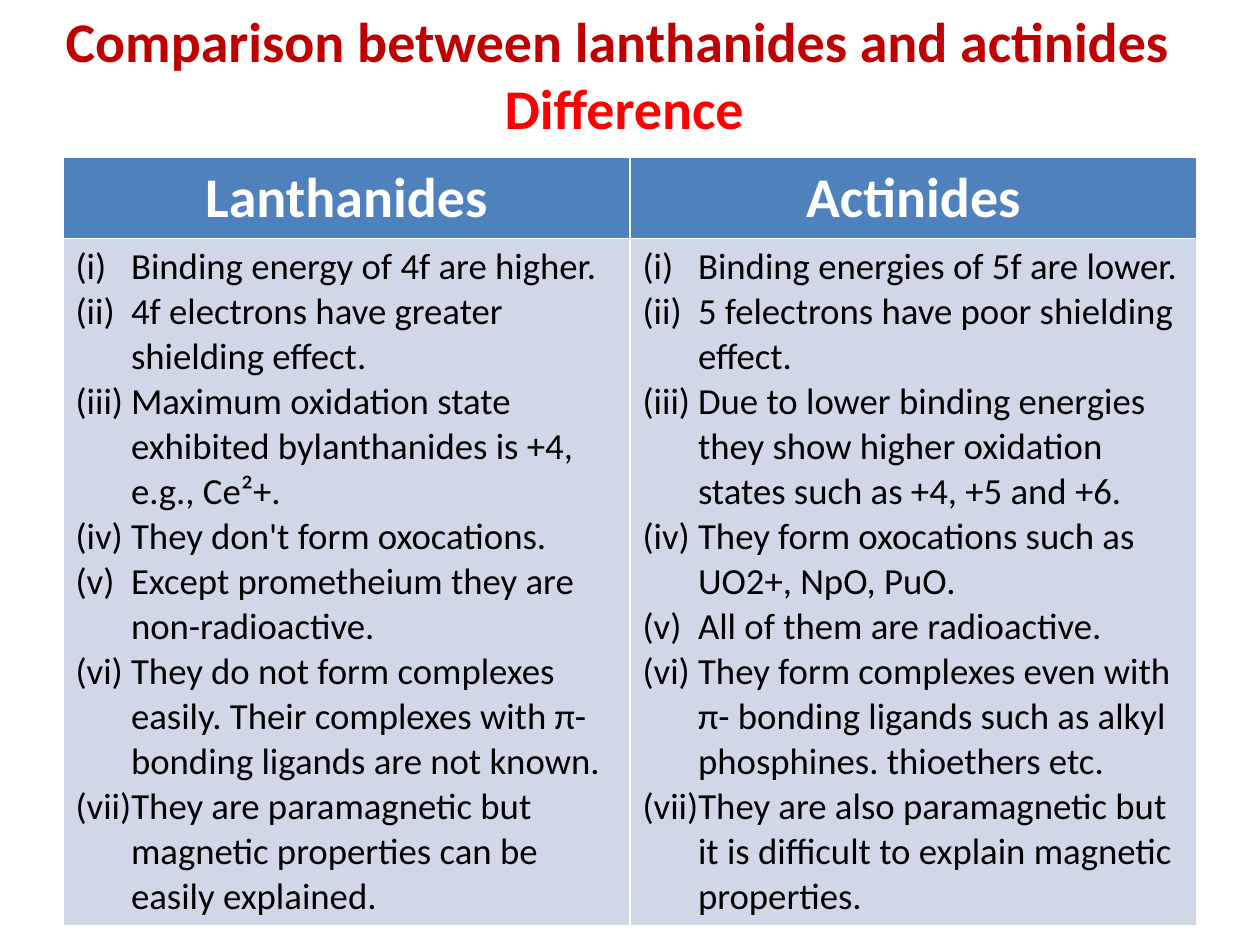
from lxml import etree
from pptx import Presentation
from pptx.dml.color import RGBColor
from pptx.enum import text
from pptx.oxml import ns
from pptx.util import Inches, Pt

ALIGN = text.PP_ALIGN


def style(par, size, color, bold, align):
    par.alignment = align
    font = par.runs[0].font
    look = {"name": "Calibri", "size": Pt(size), "bold": bold}
    for key, value in look.items():
        setattr(font, key, value)
    font.color.rgb = RGBColor.from_string(color)


def number(par):
    """Give the paragraph a hanging (i), (ii), (iii) number."""
    props = par._p.get_or_add_pPr()
    props.set("marL", str(Inches(0.44)))
    props.set("indent", str(Inches(-0.44)))
    mark = etree.SubElement(props, ns.qn("a:buAutoNum"))
    mark.set("type", "romanLcParenBoth")


points = {
    "Lanthanides": [
        "Binding energy of 4f are higher.",
        "4f electrons have greater shielding effect.",
        "Maximum oxidation state exhibited bylanthanides is +4, e.g., Ce²+.",
        "They don't form oxocations.",
        "Except prometheium they are non-radioactive.",
        "They do not form complexes easily. Their complexes with π-bonding ligands are not known.",
        "They are paramagnetic but magnetic properties can be easily explained.",
    ],
    "Actinides": [
        "Binding energies of 5f are lower.",
        "5 felectrons have poor shielding effect.",
        "Due to lower binding energies they show higher oxidation states such as +4, +5 and +6.",
        "They form oxocations such as UO2+, NpO, PuO.",
        "All of them are radioactive.",
        "They form complexes even with π- bonding ligands such as alkyl phosphines. thioethers etc.",
        "They are also paramagnetic but it is difficult to explain magnetic properties.",
    ],
}

deck = Presentation()
deck.slide_width, deck.slide_height = Inches(10), Inches(7.5)
slide = deck.slides.add_slide(deck.slide_layouts[5])

title = slide.shapes.title
title.left, title.top = Inches(0.42), Inches(0)
title.width, title.height = Inches(9.17), Inches(1.18)
frame = title.text_frame
frame.text = "Comparison between lanthanides and actinides\nDifference "
frame.vertical_anchor = text.MSO_ANCHOR.TOP
frame.auto_size = text.MSO_AUTO_SIZE.NONE
style(frame.paragraphs[0], 32, "C00000", True, ALIGN.JUSTIFY)
style(frame.paragraphs[1], 32, "FF0000", True, ALIGN.CENTER)

grid = slide.shapes.add_table(2, 2, Inches(0.5), Inches(1.25), Inches(9), Inches(5.98))
table = grid.table
for row in table.rows:
    row.height = Inches(0.41)
grid.height = Inches(5.98)

for col, (name, lines) in enumerate(points.items()):
    head, body = table.cell(0, col), table.cell(1, col)
    for cell, color in ((head, "4F81BD"), (body, "D0D8E8")):
        cell.fill.solid()
        cell.fill.fore_color.rgb = RGBColor.from_string(color)
    head.text = name
    style(head.text_frame.paragraphs[0], 32, "FFFFFF", True, ALIGN.CENTER)
    body.text = "\n".join(lines)
    for par in body.text_frame.paragraphs:
        style(par, 21, "000000", False, ALIGN.LEFT)
        number(par)

deck.save("out.pptx")
